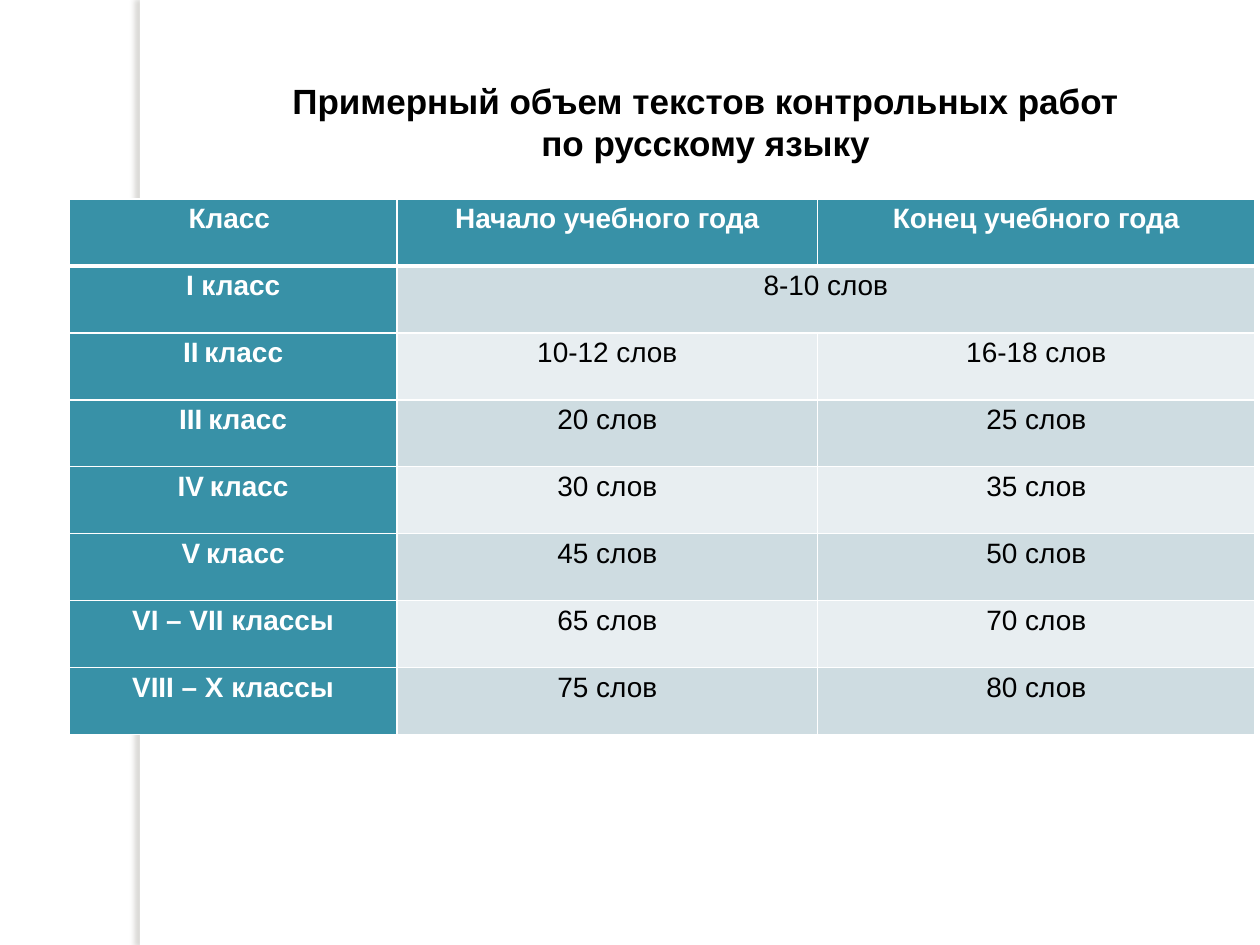
import pptx
import pptx.util
import pptx.oxml
import pptx.oxml.ns
import pptx.dml.color
import pptx.enum.shapes
import pptx.enum.text
from lxml import etree

Inches = pptx.util.Inches
RGBColor = pptx.dml.color.RGBColor

WHITE = RGBColor(0xFF, 0xFF, 0xFF)
BLACK = RGBColor(0x00, 0x00, 0x00)
TEAL = RGBColor(0x38, 0x91, 0xA7)
BANDS = [RGBColor(0xCE, 0xDC, 0xE1), RGBColor(0xE8, 0xEE, 0xF1)]
SHADOW = RGBColor(0x73, 0x6F, 0x63)


def add_text(paragraph, text, size=16, color=BLACK, bold=False, spacing=None):
    paragraph.alignment = pptx.enum.text.PP_ALIGN.CENTER
    paragraph.line_spacing = spacing
    run = paragraph.add_run()
    run.text = text
    run.font.name = "Arial"
    run.font.size = pptx.util.Pt(size)
    run.font.bold = bold
    run.font.color.rgb = color


def set_borders(cell, bottom_width):
    properties = cell._tc.get_or_add_tcPr()
    widths = {"lnL": 1, "lnR": 1, "lnT": 1, "lnB": bottom_width}
    for position, (side, width) in enumerate(widths.items()):
        properties.insert(position, pptx.oxml.parse_xml(
            f'<a:{side} {pptx.oxml.ns.nsdecls("a")} w="{pptx.util.Pt(width)}">'
            f'<a:solidFill><a:srgbClr val="{WHITE}"/></a:solidFill></a:{side}>'))


presentation = pptx.Presentation()
presentation.slide_width = Inches(10)
presentation.slide_height = Inches(7.5)
slide = presentation.slides.add_slide(presentation.slide_layouts[5])

# Vertical stripe with a soft shadow to its left
stripe = slide.shapes.add_shape(
    pptx.enum.shapes.MSO_SHAPE.RECTANGLE,
    Inches(1.11), Inches(0), Inches(0.08), Inches(7.5))
stripe.shadow.inherit = False
stripe.fill.solid()
stripe.fill.fore_color.rgb = WHITE
stripe.line.fill.background()
effects = stripe._element.spPr.find(pptx.oxml.ns.qn("a:effectLst"))
shadow = etree.SubElement(
    effects, pptx.oxml.ns.qn("a:outerShdw"), blurRad=str(pptx.util.Pt(3)),
    dist=str(pptx.util.Pt(3)), dir="10800000", algn="tl", rotWithShape="0")
shadow_color = etree.SubElement(
    shadow, pptx.oxml.ns.qn("a:srgbClr"), val=str(SHADOW))
etree.SubElement(shadow_color, pptx.oxml.ns.qn("a:alpha"), val="25000")

# Title
title = slide.shapes.title
title.left, title.top = Inches(2.08), Inches(0.58)
title.width, title.height = Inches(7.04), Inches(0.77)
title.text_frame.word_wrap = True
title.text_frame.vertical_anchor = pptx.enum.text.MSO_ANCHOR.MIDDLE
add_text(title.text_frame.paragraphs[0],
         "Примерный объем текстов контрольных работ по русскому языку",
         size=20, bold=True)

# Word counts by class; a label in parts is joined by a smaller space
rows = [
    (["Класс "], "Начало учебного года", "Конец учебного года"),
    (["I класс"], "8-10 слов", ""),
    (["II", "класс"], "10-12 слов", "16-18 слов"),
    (["III", "класс"], "20 слов", "25 слов"),
    (["IV", "класс"], "30 слов", "35 слов"),
    (["V", "класс"], "45 слов", "50 слов"),
    (["VI – VII классы"], "65 слов", "70 слов"),
    (["VIII – X классы"], "75 слов", "80 слов"),
]
column_widths = [2.6, 3.34, 3.47]
word_counts = slide.shapes.add_table(
    len(rows), len(column_widths), Inches(0.55), Inches(1.58),
    Inches(sum(column_widths)), Inches(4.25)).table
for column, width in zip(word_counts.columns, column_widths):
    column.width = Inches(width)

for row_index, (label, start, end) in enumerate(rows):
    for column_index, content in enumerate((label, [start], [end])):
        cell = word_counts.cell(row_index, column_index)
        heading = row_index == 0 or column_index == 0
        cell.margin_left = cell.margin_right = Inches(0.07)
        cell.margin_top = cell.margin_bottom = Inches(0)
        cell.fill.solid()
        cell.fill.fore_color.rgb = TEAL if heading else BANDS[(row_index - 1) % 2]
        set_borders(cell, bottom_width=3 if row_index == 0 else 1)
        text_format = dict(color=WHITE if heading else BLACK,
                           bold=heading, spacing=1.15)
        paragraph = cell.text_frame.paragraphs[0]
        for part_index, part in enumerate(content):
            if part_index:
                add_text(paragraph, " ", size=12, **text_format)
            if part:
                add_text(paragraph, part, **text_format)

# The first class has one count for the whole year
word_counts.cell(1, 1).merge(word_counts.cell(1, 2))

presentation.save("out.pptx")
